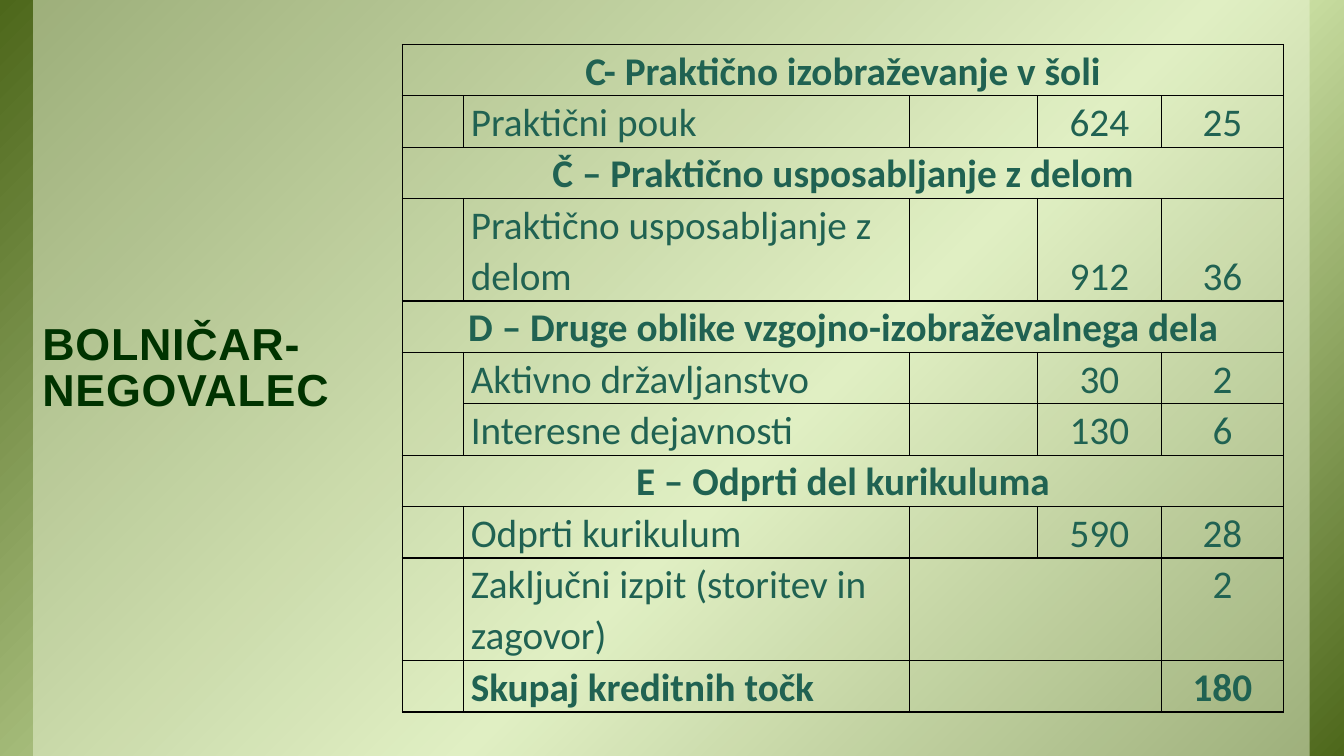
from lxml.etree import SubElement, fromstring
from pptx import Presentation
from pptx.dml.color import RGBColor
from pptx.enum.shapes import MSO_SHAPE as SHAPE
from pptx.enum.text import MSO_ANCHOR as ANCHOR, MSO_AUTO_SIZE as AUTO, PP_ALIGN as ALIGN
from pptx.oxml.ns import nsdecls, qn
from pptx.util import Inches, Pt


def rgb(code):
    return RGBColor.from_string(code)


def style_text(tf, text, anchor, align, spacing, **font):
    tf.text = text
    tf.vertical_anchor = anchor
    p = tf.paragraphs[0]
    p.alignment, p.line_spacing = align, spacing
    r = p.runs[0]
    r.font.color.rgb = rgb(font.pop("color"))
    for name, value in font.items():
        setattr(r.font, name, value)
    return r


prs = Presentation()
prs.slide_width, prs.slide_height = Inches(13.33), Inches(7.5)
s = prs.slides.add_slide(prs.slide_layouts[5])
title = s.shapes.title

# Backdrop and translucent panel
backdrop = s.shapes.add_shape(SHAPE.RECTANGLE, 0, 0, prs.slide_width, prs.slide_height)
panel = s.shapes.add_shape(SHAPE.RECTANGLE, Inches(0.33), 0, Inches(12.66), prs.slide_height)
for sp in (backdrop, panel):
    sp.shadow.inherit = False
    sp.line.fill.background()

backdrop.fill.gradient()
backdrop.fill.gradient_angle = 315
stops = backdrop.element.spPr.find(".//" + qn("a:gsLst"))
for stop in list(stops):
    stops.remove(stop)
for share, color in ((0, "4D671B"), (58, "D6EAAF"), (100, "4D671B")):
    stop = SubElement(stops, qn("a:gs"), pos=str(share * 1000))
    SubElement(stop, qn("a:srgbClr"), val=color)

panel.fill.solid()
panel.fill.fore_color.rgb = rgb("EBF5D7")
SubElement(panel.element.spPr.find(".//" + qn("a:srgbClr")), qn("a:alpha"), val="50000")

# Title, in front of the panel
title.element.getparent().append(title.element)
title.left, title.top, title.width, title.height = map(Inches, (0.29, 2.02, 3.31, 2.17))
tf = title.text_frame
tf.word_wrap, tf.auto_size = True, AUTO.NONE
tf.margin_left = tf.margin_right = Inches(0.13)
tf.margin_top = tf.margin_bottom = Inches(0.07)
r = style_text(tf, "BOLNIČAR-NEGOVALEC", ANCHOR.BOTTOM, ALIGN.LEFT, 0.85,
               color="003300", name="Arial", size=Pt(32), bold=True)
r.font._element.set("spc", "50")

# Curriculum: a lone text is a section heading, otherwise name, hours, credits
rows = [
    ("C- Praktično izobraževanje v šoli",),
    ("Praktični pouk", "624", "25"),
    ("Č – Praktično usposabljanje z delom",),
    ("Praktično usposabljanje z delom", "912", "36"),
    ("D – Druge oblike vzgojno-izobraževalnega dela",),
    ("Aktivno državljanstvo", "30", "2"),
    ("Interesne dejavnosti", "130", "6"),
    ("E – Odprti del kurikuluma",),
    ("Odprti kurikulum", "590", "28"),
    ("Zaključni izpit (storitev in zagovor)", "", "2"),
    ("Skupaj kreditnih točk", "", "180"),
]
col_widths = (0.61, 4.42, 1.27, 1.23, 1.21)
TALL_ROWS = (3, 9)
LAST = len(rows) - 1

frame = s.shapes.add_table(len(rows), len(col_widths), Inches(3.99), Inches(0.44),
                           Inches(8.74), Inches(6.61))
table = frame.table
table.first_row = table.horz_banding = False
for col, width in zip(table.columns, col_widths):
    col.width = Inches(width)
for i, row in enumerate(table.rows):
    row.height = Inches(1.01 if i in TALL_ROWS else 0.51)

# Clear fills and thin black borders
for cell in table.iter_cells():
    cell.margin_left = cell.margin_right = Inches(0.07)
    cell.margin_top = cell.margin_bottom = 0
    cell.fill.background()
    for k, side in enumerate(("lnL", "lnR", "lnT", "lnB")):
        cell._tc.tcPr.insert(k, fromstring(
            f'<a:{side} {nsdecls("a")} w="12700"><a:solidFill>'
            f'<a:srgbClr val="000000"/></a:solidFill></a:{side}>'))

# Texts and merged cells
for i, texts in enumerate(rows):
    heading = len(texts) == 1
    if heading:
        table.cell(i, 0).merge(table.cell(i, 4))
    elif not texts[1]:
        table.cell(i, 2).merge(table.cell(i, 3))
    for j, text in zip((0,) if heading else (1, 3, 4), texts):
        if not text:
            continue
        low = i == 4 or (j > 1 and texts[1])
        style_text(table.cell(i, j).text_frame, text, ANCHOR.TOP,
                   ALIGN.LEFT if j == 1 else ALIGN.CENTER, 1.07, color="206252",
                   name="Calibri", size=Pt(28), bold=heading or i == LAST)
        table.cell(i, j).vertical_anchor = ANCHOR.BOTTOM if low else ANCHOR.TOP
table.cell(5, 0).merge(table.cell(6, 0))

prs.save("out.pptx")
